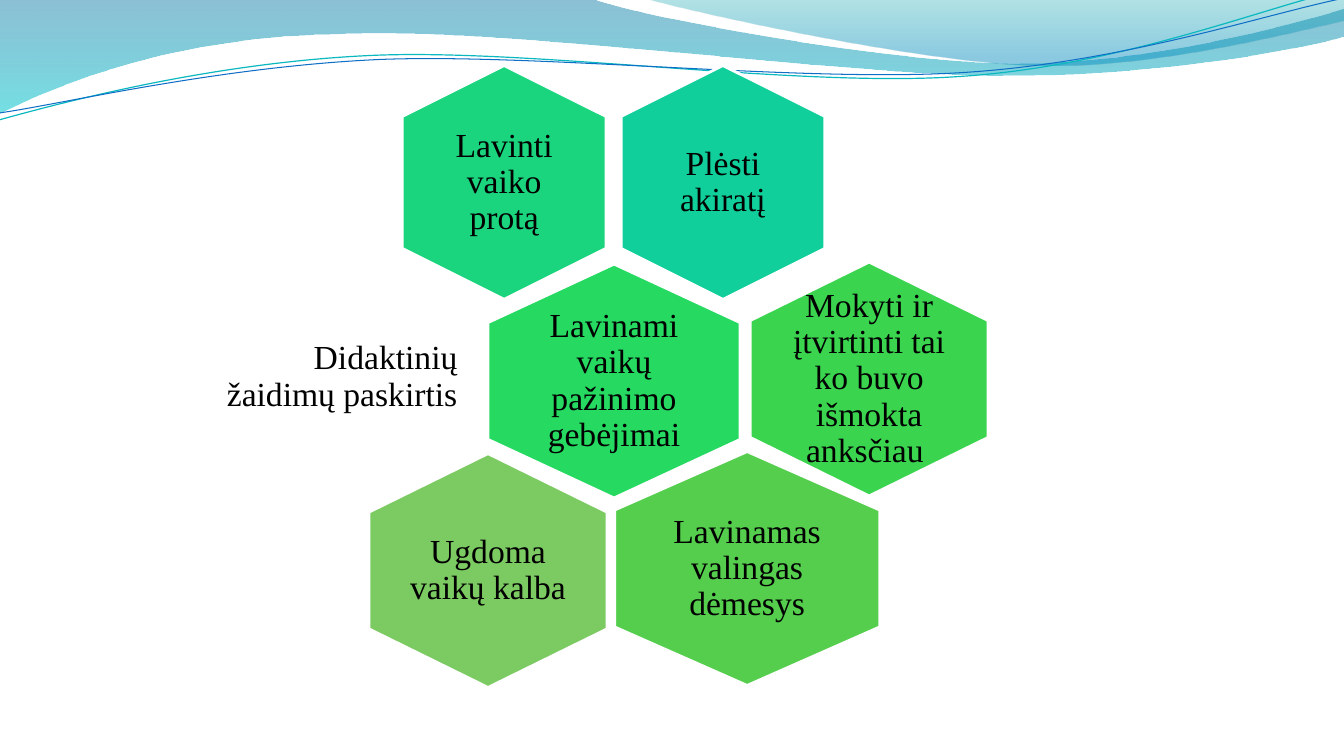
from dataclasses import dataclass
from math import cos, radians, sin

from lxml import etree
from pptx import Presentation
from pptx.dml.color import RGBColor
from pptx.enum.shapes import MSO_SHAPE
from pptx.enum.text import MSO_ANCHOR, PP_ALIGN
from pptx.oxml.ns import qn
from pptx.util import Inches, Pt

HEXAGON = MSO_SHAPE.HEXAGON
MIDDLE = MSO_ANCHOR.MIDDLE
CENTER, RIGHT = PP_ALIGN.CENTER, PP_ALIGN.RIGHT
HEXAGON_LENGTH = 2.32
LINE_TILT = -2.7


@dataclass(frozen=True)
class Theme:
    """Colours, font and sizes of the slide."""

    font: str = "Times New Roman"
    text_size: float = 24
    text: str = "000000"
    outline: str = "FFFFFF"
    outline_width: float = 2
    back_wave: tuple = ((0, "0074A1", 45), (1, "00C6CF", 55))
    front_wave: tuple = ((0, "00A1A9", 30), (0.8, "008BBF", 45))
    teal_line: tuple = ("0AB8BF", 0.85)
    blue_line: tuple = ("0F6FC6", 0.75)
    turquoise: str = "10CF9B"
    emerald: str = "1AD57D"
    green: str = "25D961"
    grass: str = "3AD44F"
    leaf: str = "55CE4E"
    olive: str = "7CCA62"


BACK_WAVE = [
    [(0, 0)], [(5.87, -0.01)],
    [(6.34, 0.17), (8.85, 0.63), (10.11, 0.63)],
    [(11.38, 0.63), (12.78, 0.26), (13.33, 0.09)],
    [(13.35, 0.36)],
    [(13.11, 0.44), (11.6, 0.76), (9.94, 0.75)],
    [(8.29, 0.75), (5.09, 0.28), (3.43, 0.34)],
    [(1.72, 0.36), (0.61, 0.83), (-0.01, 1.13)],
    [(0, 0)],
]
FRONT_WAVE = [
    [(6.39, -0.01)],
    [(6.79, 0.11), (9.09, 0.62), (10.25, 0.65)],
    [(11.41, 0.69), (12.82, 0.32), (13.33, 0.21)],
    [(13.33, 0)], [(6.39, -0.01)],
]
TEAL_LINE = [
    [(-0.01, 1.19)],
    [(0.64, 1.01), (2.11, 0.62), (3.69, 0.55)],
    [(5.27, 0.48), (7.9, 0.87), (9.5, 0.76)],
    [(11.1, 0.66), (12.52, 0.08), (13.31, -0.1)],
]
BLUE_LINE = [
    [(0, 1.12)],
    [(0.63, 1.03), (2.18, 0.66), (3.78, 0.59)],
    [(5.37, 0.53), (7.96, 0.82), (9.55, 0.72)],
    [(11.15, 0.62), (12.55, 0.14), (13.34, -0.02)],
]


def turn(outline, pivot, degrees):
    """Turn the points of an outline clockwise around a pivot."""
    cosine, sine = cos(radians(degrees)), sin(radians(degrees))
    px, py = pivot
    return [[(px + (x - px) * cosine - (y - py) * sine,
              py + (x - px) * sine + (y - py) * cosine) for x, y in segment]
            for segment in outline]


def apply_format(target, values):
    """Set each attribute named in the format values."""
    for name, value in values.items():
        setattr(target, name, value)


class SlideBuilder:
    """Draws the elements of one slide in one theme."""

    def __init__(self, slide, theme):
        """Keep the slide and its theme."""
        self.slide = slide
        self.theme = theme

    def freeform(self, outline, close):
        """Draw an outline of straight and cubic segments."""
        start, *rest = [(Inches(x), Inches(y)) for segment in outline for x, y in segment]
        builder = self.slide.shapes.build_freeform(*start, scale=1.0)
        builder.add_line_segments(rest, close=close)
        shape = builder.convert_to_shape()
        shape.shadow.inherit = False
        vertices = iter(list(shape.element.spPr.iter(qn("a:lnTo"))))
        for segment in outline[1:]:
            vertex = next(vertices)
            if len(segment) == 3:
                vertex.tag = qn("a:cubicBezTo")
                for _ in range(2):
                    control = next(vertices)
                    vertex.append(control[0])
                    control.getparent().remove(control)
        return shape

    def wave(self, outline, stops):
        """Draw a closed wave with a translucent gradient from top to bottom."""
        shape = self.freeform(outline, True)
        shape.line.fill.background()
        shape.fill.gradient()
        shape.fill.gradient_angle = 270
        for stop, (position, color, opacity) in zip(shape.fill.gradient_stops, stops):
            stop.position = position
            stop.color.rgb = RGBColor.from_string(color)
        colors = shape.element.spPr.iter(qn("a:srgbClr"))
        for element, (position, color, opacity) in zip(colors, stops):
            etree.SubElement(element, qn("a:alpha"), val=str(opacity * 1000))

    def curve(self, outline, pivot, style):
        """Draw an open curved line, tilted around its pivot."""
        shape = self.freeform(turn(outline, pivot, -LINE_TILT), False)
        shape.rotation = LINE_TILT
        shape.fill.background()
        self.line(shape, *style)

    def line(self, shape, color, width):
        """Set the line of a shape."""
        shape.line.color.rgb = RGBColor.from_string(color)
        shape.line.width = Pt(width)

    def hexagon(self, center, across, color):
        """Draw an upright hexagon around its centre."""
        x, y = center
        shape = self.slide.shapes.add_shape(
            HEXAGON, Inches(x - HEXAGON_LENGTH / 2), Inches(y - across / 2),
            Inches(HEXAGON_LENGTH), Inches(across))
        shape.rotation = 90
        shape.adjustments[0] = 0.25
        shape.shadow.inherit = False
        shape.fill.solid()
        shape.fill.fore_color.rgb = RGBColor.from_string(color)
        self.line(shape, self.theme.outline, self.theme.outline_width)

    def label(self, text, center, size, inset, alignment=CENTER):
        """Write a text box around its centre."""
        (x, y), (width, height) = center, size
        box = self.slide.shapes.add_textbox(
            Inches(x - width / 2), Inches(y - height / 2), Inches(width), Inches(height))
        margins = {f"margin_{side}": Inches(inset)
                   for side in ("left", "top", "right", "bottom")}
        frame = box.text_frame
        apply_format(frame, {"word_wrap": True, "vertical_anchor": MIDDLE, **margins})
        paragraph = frame.paragraphs[0]
        apply_format(paragraph, {"text": text, "alignment": alignment, "line_spacing": 0.9})
        font = paragraph.runs[0].font
        apply_format(font, {"name": self.theme.font, "size": Pt(self.theme.text_size)})
        font.color.rgb = RGBColor.from_string(self.theme.text)


def main():
    """Build and save the slide."""
    presentation = Presentation()
    presentation.slide_width = Inches(13.33)
    presentation.slide_height = Inches(7.5)
    theme = Theme()
    builder = SlideBuilder(
        presentation.slides.add_slide(presentation.slide_layouts[6]), theme)

    builder.wave(BACK_WAVE, theme.back_wave)
    builder.wave(FRONT_WAVE, theme.front_wave)
    builder.curve(TEAL_LINE, (6.65, 0.58), theme.teal_line)
    builder.curve(BLUE_LINE, (6.67, 0.59), theme.blue_line)

    goals = [
        ("Plėsti akiratį", (7.17, 1.81), 2.02, theme.turquoise, (1.39, 1.6), 0.1),
        ("Lavinti vaiko protą", (5, 1.81), 2.02, theme.emerald, (1.39, 1.6), 0),
        ("Lavinami vaikų pažinimo gebėjimai", (6.09, 3.78), 2.5, theme.green, (1.67, 1.55), 0.1),
        ("Mokyti ir įtvirtinti tai ko buvo išmokta anksčiau ", (8.62, 3.76), 2.36, theme.grass,
         (1.57, 1.55), 0),
        ("Lavinamas valingas dėmesys", (7.41, 5.64), 2.63, theme.leaf, (1.75, 1.55), 0.1),
        ("Ugdoma vaikų kalba", (4.84, 5.66), 2.36, theme.olive, (1.57, 1.55), 0),
    ]
    for text, center, across, color, text_area, inset in goals:
        builder.hexagon(center, across, color)
        builder.label(text, center, text_area, inset)
    builder.label("Didaktinių žaidimų paskirtis ", (3.38, 3.74), (2.51, 1.39), 0.1, RIGHT)

    presentation.save("out.pptx")


if __name__ == "__main__":
    main()
